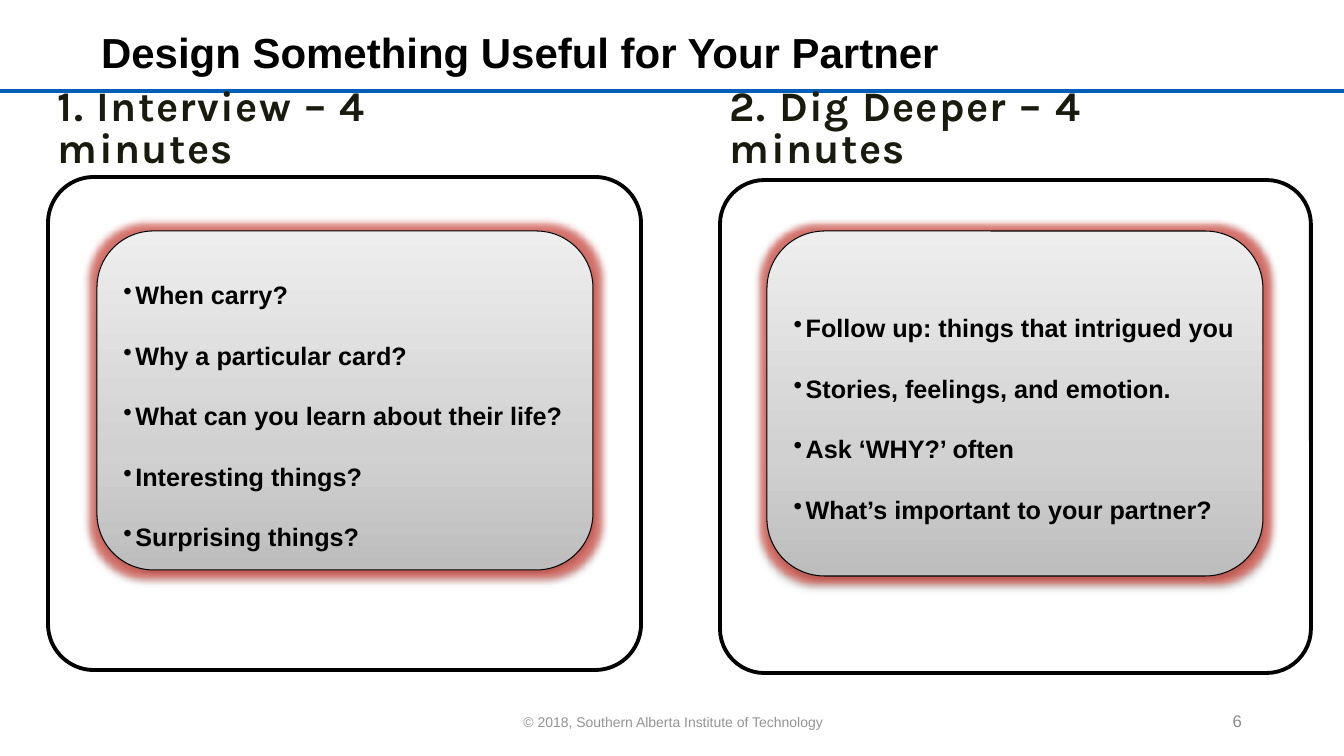
from dataclasses import dataclass

from lxml import etree
from pptx import Presentation
from pptx.dml.color import RGBColor
from pptx.enum.shapes import MSO_SHAPE
from pptx.enum.text import MSO_ANCHOR, MSO_AUTO_SIZE, PP_ALIGN
from pptx.oxml.ns import qn
from pptx.util import Pt

RECT, ROUND = MSO_SHAPE.RECTANGLE, MSO_SHAPE.ROUNDED_RECTANGLE
TOP, MIDDLE, BOTTOM = MSO_ANCHOR.TOP, MSO_ANCHOR.MIDDLE, MSO_ANCHOR.BOTTOM
LEFT, CENTER, RIGHT = PP_ALIGN.LEFT, PP_ALIGN.CENTER, PP_ALIGN.RIGHT
WIDE, HIGH = 1344, 756
SCALE = 12192000 / WIDE
INDENT = 12


@dataclass(frozen=True)
class Theme:
    white: str = "FFFFFF"
    black: str = "000000"
    blue: str = "005EB8"
    glow: str = "DA291C"
    stops: tuple = ((0, "BDBDBD"), (35, "D1D1D1"), (100, "EEEEEE"))
    title = dict(size=30, name="Arial", color="000000", bold=True)
    head = dict(size=30, name="Karla", color="191B0E", bold=True)
    body = dict(size=18, name="Arial", color="000000", bold=True)
    foot = dict(size=10, name="Arial", color="949494")
    number = dict(size=12, name="Arial", color="8C8C8C")


THEME = Theme()

PANELS = [
    dict(head="1. Interview – 4 minutes",
         head_box=(48, 80, 490, 97), frame=(48, 177, 593, 493),
         round=0.093, card=(97, 231, 496, 339),
         points=["When carry?", "Why a particular card?",
                 "What can you learn about their life?",
                 "Interesting things?", "Surprising things?"]),
    dict(head="2. Dig Deeper – 4 minutes",
         head_box=(720, 87, 490, 90), frame=(720, 180, 591, 493),
         round=0.09, card=(767, 231, 496, 345),
         points=["Follow up: things that intrigued you",
                 "Stories, feelings, and emotion.", "Ask ‘WHY?’ often",
                 "What’s important to your partner?"]),
]


def px(num):
    return round(num * SCALE)


def sub(node, tag, **attrs):
    """Add a DrawingML child whose attributes are given as keywords."""
    child = etree.SubElement(node, qn("a:" + tag))
    for key, val in attrs.items():
        child.set(key, str(val))
    return child


def tint(node, color, alpha=100):
    rgb = sub(node, "srgbClr", val=color)
    if alpha < 100:
        sub(rgb, "alpha", val=alpha * 1000)


def style(font, look):
    for key, val in look.items():
        if key == "color":
            font.color.rgb = RGBColor.from_string(val)
        else:
            setattr(font, key, Pt(val) if key == "size" else val)


def write(frame, lines, look, anchor=TOP, align=LEFT, space=None, mark=False):
    frame.word_wrap = True
    frame.auto_size = MSO_AUTO_SIZE.NONE
    frame.vertical_anchor = anchor
    for pos, line in enumerate(lines):
        para = frame.add_paragraph() if pos else frame.paragraphs[0]
        para.alignment = align
        if space:
            para.line_spacing = space
        if mark:
            props = para._p.get_or_add_pPr()
            props.set("marL", str(px(INDENT)))
            props.set("indent", str(-px(INDENT)))
            sub(props, "buChar", char="•")
        run = para.add_run()
        run.text = line
        style(run.font, look)


def add_text(slide, box, text, look, **opts):
    label = slide.shapes.add_textbox(*map(px, box))
    write(label.text_frame, [text], look, **opts)
    return label


def add_box(slide, kind, box, fill, line=None):
    """Add a flat shape; line is a width in points, or None for no line."""
    shape = slide.shapes.add_shape(kind, *map(px, box))
    shape.shadow.inherit = False
    shape.fill.solid()
    shape.fill.fore_color.rgb = RGBColor.from_string(fill)
    if line:
        shape.line.width = Pt(line)
        shape.line.color.rgb = RGBColor.from_string(THEME.black)
    else:
        shape.line.fill.background()
    return shape


def add_card(slide, box, points):
    """Add a grey gradient card with a red glow, a shadow and bullets."""
    card = add_box(slide, ROUND, box, THEME.white, 0.75)
    card.fill.gradient()
    card.fill.gradient_angle = 90
    props = card._element.spPr
    stops = props.find(".//" + qn("a:gsLst"))
    for stop in list(stops):
        stops.remove(stop)
    for pos, color in THEME.stops:
        tint(sub(stops, "gs", pos=pos * 1000), color)
    effects = props.find(qn("a:effectLst"))
    tint(sub(effects, "glow", rad=Pt(10)), THEME.glow, 55)
    shade = sub(effects, "outerShdw", blurRad=Pt(3.1), dist=Pt(1.6),
                dir=5400000, rotWithShape=0)
    tint(shade, THEME.black, 38)
    write(card.text_frame, points, THEME.body, anchor=MIDDLE, space=2.0,
          mark=True)


def add_head(slide, box, text):
    label = add_text(slide, box, text, THEME.head, anchor=BOTTOM, space=0.84)
    run = label.text_frame.paragraphs[0].runs[0]
    run._r.get_or_add_rPr().set("spc", "100")


def add_title(slide, box, text):
    title = slide.shapes.title
    for key, val in zip(("left", "top", "width", "height"), box):
        setattr(title, key, px(val))
    write(title.text_frame, [text], THEME.title, anchor=MIDDLE)


def main():
    deck = Presentation()
    deck.slide_width, deck.slide_height = px(WIDE), px(HIGH)
    slide = deck.slides.add_slide(deck.slide_layouts[5])
    add_box(slide, RECT, (0, 89, WIDE, 4), THEME.blue)
    add_text(slide, (447, 709, 452, 27),
             "© 2018, Southern Alberta Institute of Technology",
             THEME.foot, align=CENTER)
    add_title(slide, (91, 17, 985, 70),
              "Design Something Useful for Your Partner")
    add_text(slide, (950, 701, 302, 40), "6", THEME.number,
             anchor=MIDDLE, align=RIGHT)
    for panel in PANELS:
        add_head(slide, panel["head_box"], panel["head"])
        frame = add_box(slide, ROUND, panel["frame"], THEME.white, 2.75)
        frame.adjustments[0] = panel["round"]
        add_card(slide, panel["card"], panel["points"])
    deck.save("out.pptx")


if __name__ == "__main__":
    main()
